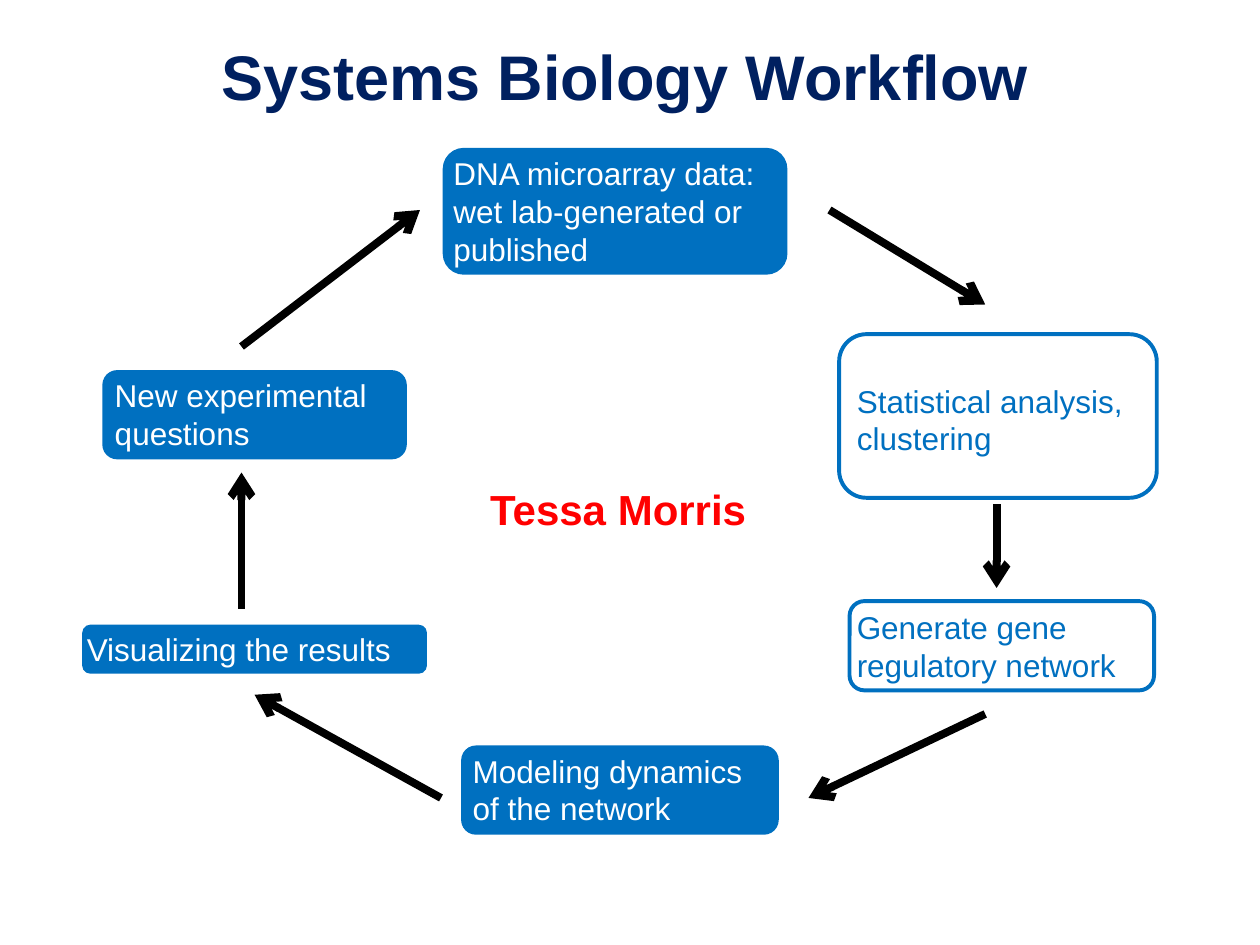
from pptx import Presentation
from pptx.dml.color import RGBColor
from pptx.enum.shapes import MSO_CONNECTOR, MSO_SHAPE
from pptx.enum.text import PP_ALIGN
from pptx.oxml.ns import qn
from pptx.util import Pt
from lxml.etree import SubElement

COLORS = {"navy": "002060", "blue": "0070C0", "white": "FFFFFF",
          "red": "FF0000", "black": "000000"}


def rgb(name):
    return RGBColor.from_string(COLORS[name])


def add_text(s, box, text, color, size=18, bold=False, align=PP_ALIGN.LEFT, wrap=True):
    tf = s.shapes.add_textbox(*map(Pt, box)).text_frame
    tf.word_wrap = wrap
    tf.text = text
    for p in tf.paragraphs:
        p.alignment = align
        for r in p.runs:
            r.font.name = "Arial"
            r.font.size = Pt(size)
            r.font.bold = bold
            r.font.color.rgb = rgb(color)


prs = Presentation()
prs.slide_width, prs.slide_height = Pt(720), Pt(540)
s = prs.slides.add_slide(prs.slide_layouts[6])

add_text(s, (78, 18, 558, 51), "Systems Biology Workflow", "navy", 36, True, PP_ALIGN.CENTER)

# Steps clockwise from the top: text, box, text area, filled, wrapped
steps = [
    ("DNA microarray data:\nwet lab-generated or published",
     (253, 84.5, 197, 72.5), (252, 84.5, 204, 72.5), True, True),
    ("Statistical analysis,\nclustering",
     (479.5, 191, 181.5, 93.5), (482.5, 214.5, 181.5, 51), False, True),
    ("Generate gene regulatory network",
     (485.5, 343.5, 174, 51), (482.5, 344, 186, 51), False, True),
    ("Modeling dynamics of the network",
     (263.5, 426, 181.5, 51), (263, 426, 182, 51), True, True),
    ("Visualizing the results",
     (47, 357, 197, 28), (42.5, 356.5, 206, 29), True, False),
    ("New experimental questions",
     (58.5, 211.5, 174, 51), (58.5, 211.5, 174, 51), True, True),
]
for text, box, area, filled, wrap in steps:
    sp = s.shapes.add_shape(MSO_SHAPE.ROUNDED_RECTANGLE, *map(Pt, box))
    sp.shadow.inherit = False
    sp.fill.solid()
    sp.fill.fore_color.rgb = rgb("blue" if filled else "white")
    if filled:
        sp.line.fill.background()
    else:
        sp.line.color.rgb = rgb("blue")
        sp.line.width = Pt(2.25)
    add_text(s, area, text, "white" if filled else "blue", wrap=wrap)

# Arrows clockwise from the top: start x, start y, end x, end y
arrows = [
    (474, 120, 563, 174),
    (569.5, 288, 569.5, 336),
    (563, 408, 462, 456),
    (252, 456, 145.5, 397),
    (138, 348, 138, 270),
    (138, 198, 240, 120),
]
for ends in arrows:
    arrow = s.shapes.add_connector(MSO_CONNECTOR.STRAIGHT, *map(Pt, ends))
    arrow.line.color.rgb = rgb("black")
    arrow.line.width = Pt(4.5)
    SubElement(arrow.line._get_or_add_ln(), qn("a:tailEnd"), type="arrow")
    SubElement(arrow._element.spPr, qn("a:effectLst"))

add_text(s, (273, 273, 162, 36), "Tessa Morris", "red", 24, True, wrap=False)

prs.save("out.pptx")
